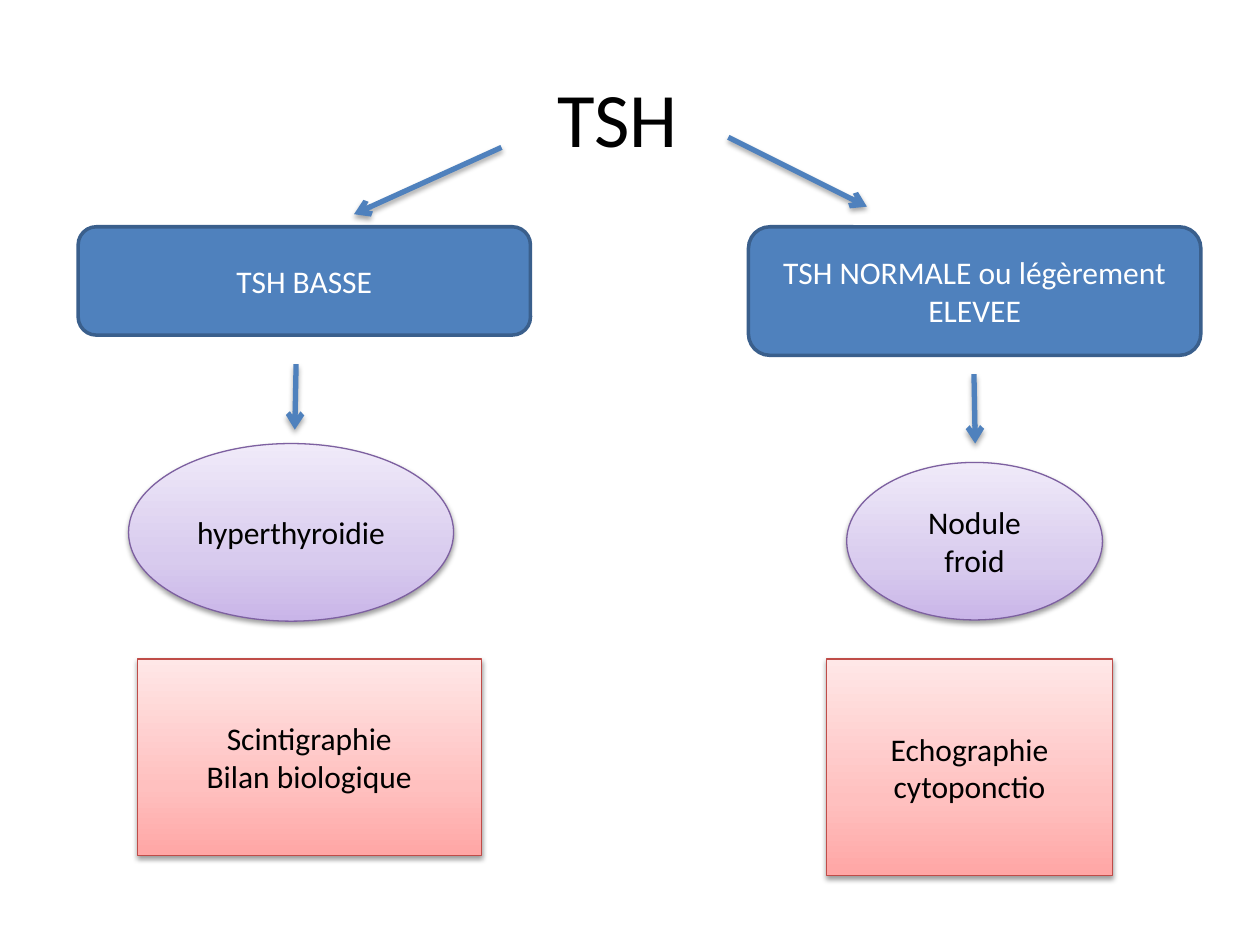
"""Build the TSH decision slide: two branches from test result to work-up."""
from copy import deepcopy
from dataclasses import dataclass
from typing import Optional

from lxml.etree import SubElement
from pptx import Presentation
from pptx.dml.color import RGBColor
from pptx.enum.shapes import MSO_CONNECTOR, MSO_SHAPE
from pptx.enum.text import MSO_ANCHOR, PP_ALIGN
from pptx.oxml.ns import qn
from pptx.util import Inches, Pt

FONT = "Calibri"
BLACK = RGBColor(0x00, 0x00, 0x00)
WHITE = RGBColor(0xFF, 0xFF, 0xFF)
BLUE = RGBColor(0x4F, 0x81, 0xBD)
DARK_BLUE = RGBColor(0x3A, 0x5F, 0x8C)
PURPLE = RGBColor(0x7D, 0x60, 0xA0)
RED = RGBColor(0xBF, 0x4C, 0x48)
LILACS = (RGBColor(0xC9, 0xB5, 0xE8), RGBColor(0xD8, 0xCB, 0xEE), RGBColor(0xF0, 0xEA, 0xF9))
PINKS = (RGBColor(0xFF, 0xA6, 0xA5), RGBColor(0xFF, 0xC0, 0xBF), RGBColor(0xFF, 0xE7, 0xE7))
STOP_POSITIONS = (0, 0.35, 1)


@dataclass(frozen=True)
class Style:
    """Look shared by every node of one step."""
    outline: MSO_SHAPE
    colours: tuple
    border: RGBColor
    border_width: float
    text_colour: RGBColor


@dataclass(frozen=True)
class Node:
    """One step of a branch, placed in inches."""
    style: Style
    left: float
    top: float
    width: float
    height: float
    lines: tuple


@dataclass(frozen=True)
class Arrow:
    """An arrow between two points in inches."""
    start: tuple
    end: tuple


RESULT = Style(MSO_SHAPE.ROUNDED_RECTANGLE, (BLUE,), DARK_BLUE, 2, WHITE)
DIAGNOSIS = Style(MSO_SHAPE.OVAL, LILACS, PURPLE, 0.75, BLACK)
WORKUP = Style(MSO_SHAPE.RECTANGLE, PINKS, RED, 0.75, BLACK)

NODES = (
    Node(RESULT, 0.62, 1.8, 3.59, 0.86, ("TSH BASSE",)),
    Node(RESULT, 5.94, 1.8, 3.59, 1.02, ("TSH NORMALE ou légèrement ELEVEE",)),
    Node(DIAGNOSIS, 1.02, 3.52, 2.58, 1.41, ("hyperthyroidie",)),
    Node(DIAGNOSIS, 6.72, 3.67, 2.03, 1.25, ("Nodule froid",)),
    Node(WORKUP, 6.56, 5.23, 2.27, 1.72, ("Echographie", "cytoponctio")),
    Node(WORKUP, 1.09, 5.23, 2.73, 1.56, ("Scintigraphie", "Bilan biologique")),
)
ARROWS = (
    Arrow((3.98, 1.17), (2.81, 1.7)),
    Arrow((5.78, 1.09), (6.88, 1.64)),
    Arrow((7.73, 2.97), (7.74, 3.52)),
    Arrow((2.35, 2.89), (2.34, 3.41)),
)


def set_shadow(part, opacity: Optional[int] = None, distance: float = 0) -> None:
    """Give a part a soft downward shadow, or none without an opacity."""
    effects = SubElement(part.element.spPr, qn("a:effectLst"))
    if opacity is None:
        return
    shadow = SubElement(effects, qn("a:outerShdw"), blurRad=str(Pt(3.1)),
                        dist=str(Pt(distance)), dir="5400000", rotWithShape="0")
    colour = SubElement(shadow, qn("a:srgbClr"), val=str(BLACK))
    SubElement(colour, qn("a:alpha"), val=str(opacity * 1000))


def fill_gradient(fill, properties, colours: tuple) -> None:
    """Fill with three stops running from bottom to top."""
    fill.gradient()
    fill.gradient_angle = 90
    first_stop = properties.find(".//" + qn("a:gs"))
    first_stop.addnext(deepcopy(first_stop))
    for stop, colour, position in zip(fill.gradient_stops, colours, STOP_POSITIONS):
        stop.color.rgb = colour
        stop.position = position


def draw_node(slide, node: Node) -> None:
    """Draw one step with its centred text."""
    style = node.style
    box = slide.shapes.add_shape(style.outline, Inches(node.left), Inches(node.top),
                                 Inches(node.width), Inches(node.height))
    box.line.color.rgb = style.border
    box.line.width = Pt(style.border_width)
    if len(style.colours) == 1:
        box.fill.solid()
        box.fill.fore_color.rgb = style.colours[0]
        set_shadow(box)
    else:
        fill_gradient(box.fill, box.element.spPr, style.colours)
        set_shadow(box, 38, 1.6)
    frame = box.text_frame
    frame.word_wrap = True
    frame.vertical_anchor = MSO_ANCHOR.MIDDLE
    frame.text = "\n".join(node.lines)
    for paragraph in frame.paragraphs:
        paragraph.alignment = PP_ALIGN.CENTER
        paragraph.font.name = FONT
        paragraph.font.size = Pt(18)
        paragraph.font.color.rgb = style.text_colour


def draw_arrow(slide, arrow: Arrow) -> None:
    """Draw one shadowed arrow."""
    points = (Inches(value) for value in arrow.start + arrow.end)
    connector = slide.shapes.add_connector(MSO_CONNECTOR.STRAIGHT, *points)
    connector.line.color.rgb = BLUE
    connector.line.width = Pt(3)
    SubElement(connector.element.spPr.find(qn("a:ln")), qn("a:tailEnd"), type="arrow")
    set_shadow(connector, 35, 1.8)


def write_title(title) -> None:
    """Place the heading slightly left of the slide centre."""
    title.left, title.top = Inches(0.5), Inches(0.3)
    title.width, title.height = Inches(9), Inches(1.25)
    frame = title.text_frame
    frame.text = "TSH"
    frame.margin_right = Inches(0.3)
    frame.vertical_anchor = MSO_ANCHOR.MIDDLE
    heading = frame.paragraphs[0]
    heading.alignment = PP_ALIGN.CENTER
    heading.font.name = FONT
    heading.font.size = Pt(44)
    heading.font.color.rgb = BLACK


def main() -> None:
    """Build and save the presentation."""
    presentation = Presentation()
    presentation.slide_width, presentation.slide_height = Inches(10), Inches(7.5)
    slide = presentation.slides.add_slide(presentation.slide_layouts.get_by_name("Title Only"))
    write_title(slide.shapes.title)
    for node in NODES:
        draw_node(slide, node)
    for arrow in ARROWS:
        draw_arrow(slide, arrow)
    presentation.save("out.pptx")


if __name__ == "__main__":
    main()
